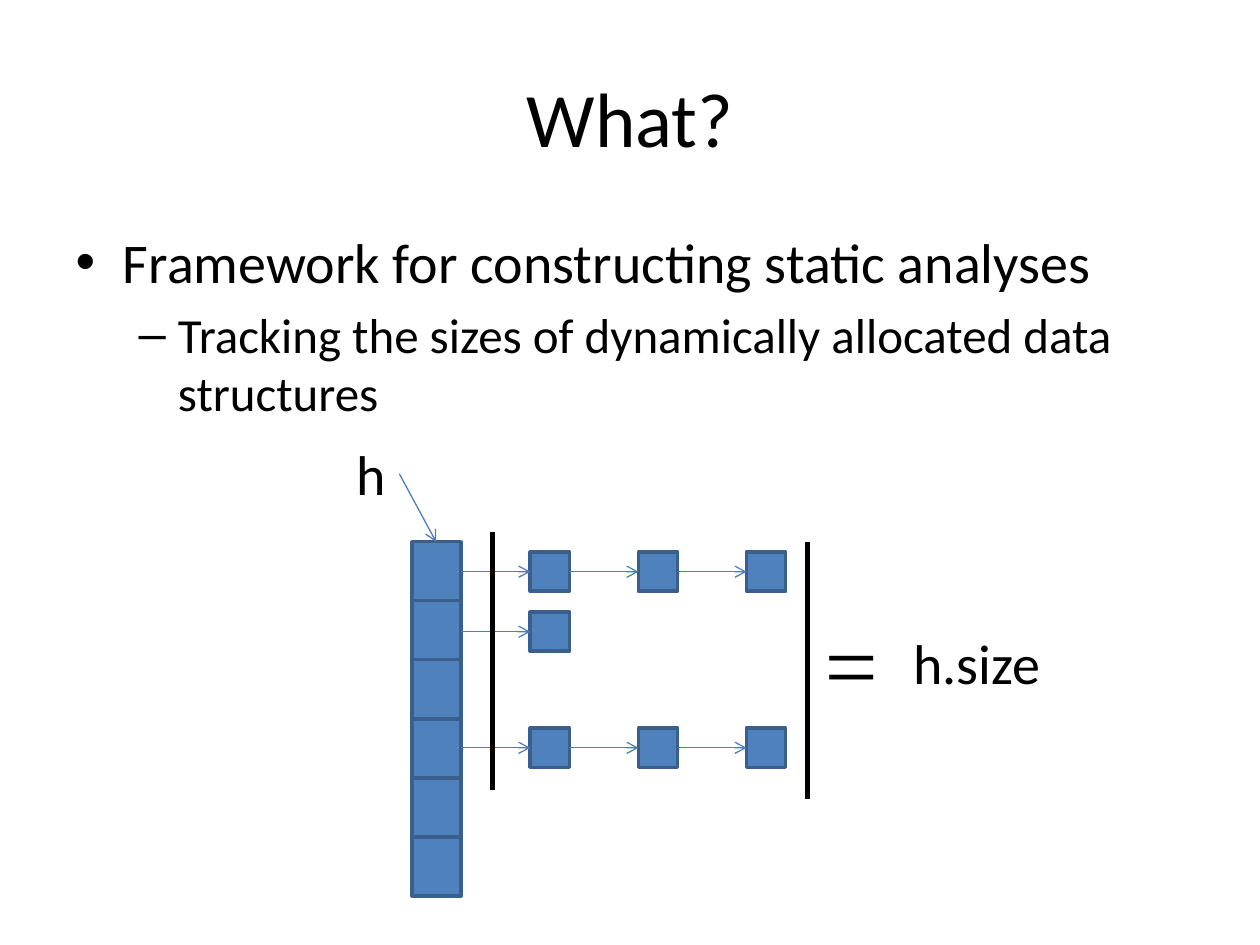
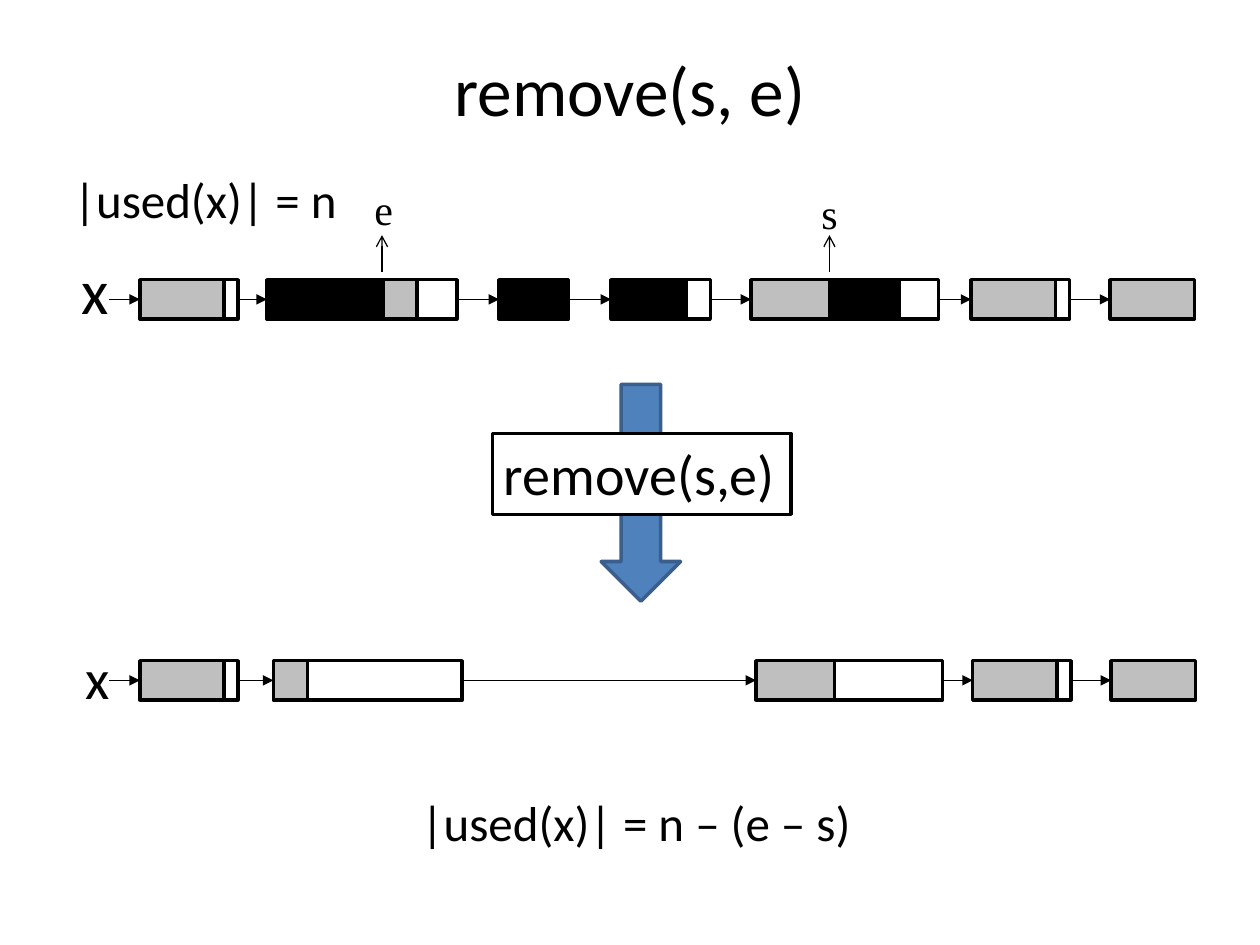
from lxml.etree import SubElement
from pptx import Presentation
from pptx.dml.color import RGBColor
from pptx.enum.shapes import MSO_CONNECTOR, MSO_SHAPE
from pptx.enum.text import MSO_ANCHOR, PP_ALIGN
from pptx.oxml.ns import qn
from pptx.util import Cm, Pt

COLORS = {
    "black": "000000",
    "white": "FFFFFF",
    "gray": "BFBFBF",
    "blue": "4F81BD",
    "blue_outline": "3A5F8C",
    "blue_arrow": "4B7EBC",
}
FONT = "Calibri"
SERIF = "Times New Roman"


def add_box(slide, left, top, width, height, fill, outline, preset=MSO_SHAPE.RECTANGLE):
    shape = slide.shapes.add_shape(preset, Cm(left), Cm(top), Cm(width), Cm(height))
    shape.shadow.inherit = False
    shape.fill.solid()
    shape.fill.fore_color.rgb = RGBColor.from_string(COLORS[fill])
    shape.line.color.rgb = RGBColor.from_string(COLORS[outline])
    shape.line.width = Pt(2)


def add_line(slide, start, end, color, width=0.75, arrowhead=None):
    connector = slide.shapes.add_connector(
        MSO_CONNECTOR.STRAIGHT, *[Cm(value) for value in (*start, *end)])
    connector.line.color.rgb = RGBColor.from_string(COLORS[color])
    connector.line.width = Pt(width)
    properties = connector.element.spPr
    if arrowhead:
        SubElement(properties.find(qn("a:ln")), qn("a:tailEnd"), type=arrowhead)
    SubElement(properties, qn("a:effectLst"))


presentation = Presentation()
presentation.slide_width, presentation.slide_height = Cm(25.4), Cm(19.05)
what_slide = presentation.slides.add_slide(presentation.slide_layouts[1])
remove_slide = presentation.slides.add_slide(presentation.slide_layouts[5])

# Titles
for slide, text, top, height, size in [
    (what_slide, "What?", 0.76, 3.18, 44),
    (remove_slide, "remove(s, e)", 0.81, 1.96, 39.6),
]:
    title = slide.shapes.title
    title.left, title.top, title.width, title.height = Cm(1.27), Cm(top), Cm(22.86), Cm(height)
    title.text_frame.text = text
    title.text_frame.vertical_anchor = MSO_ANCHOR.MIDDLE
    paragraph = title.text_frame.paragraphs[0]
    paragraph.alignment = PP_ALIGN.CENTER
    paragraph.font.name, paragraph.font.size = FONT, Pt(size)

# Slide 1: list
body = what_slide.placeholders[1]
body.left, body.top, body.width, body.height = Cm(1.27), Cm(4.45), Cm(22.86), Cm(12.57)
body.text_frame.text = ("Framework for constructing static analyses\n"
                        "Tracking the sizes of dynamically allocated data structures")
for level, (paragraph, size) in enumerate(zip(body.text_frame.paragraphs, (32, 28))):
    paragraph.level = level
    paragraph.font.name, paragraph.font.size = FONT, Pt(size)

# Slide 1: hash table column
table_left, table_top, cell_width, cell_height = 8.31, 10.92, 0.99, 1.19
for row in range(6):
    add_box(what_slide, table_left, table_top + row * cell_height,
            cell_width, cell_height, "blue", "blue_outline")
add_line(what_slide, (8.05, 9.55), (8.79, table_top), "blue_arrow", arrowhead="arrow")

# Slide 1: linked chains, each as top and node count
node_size, first_node, node_pitch = 0.79, 10.69, 2.18
for top, count in [(11.13, 3), (12.34, 1), (14.68, 3)]:
    arrow_start, middle = table_left + cell_width, top + node_size / 2
    for index in range(count):
        left = first_node + index * node_pitch
        add_box(what_slide, left, top, node_size, node_size, "blue", "blue_outline")
        add_line(what_slide, (arrow_start, middle), (left, middle), "blue_arrow",
                 arrowhead="arrow")
        arrow_start = left + node_size

# Slide 1: size bars
for x, top, bottom in [(9.93, 10.72, 15.93), (16.28, 10.92, 16.1)]:
    add_line(what_slide, (x, top), (x, bottom), "black", width=3)

# Slide 2: lists before and after, each node as left edge and segments
block_height = 0.79
full_block = [(1.7, "gray"), (0.28, "white")]
last_block = [(1.7, "gray")]
before = [
    (2.82, full_block),
    (5.38, [(2.34, "black"), (0.69, "gray"), (0.8, "white")]),
    (10.06, [(1.4, "black")]),
    (12.32, [(1.52, "black"), (0.48, "white")]),
    (15.14, [(1.58, "gray"), (1.4, "black"), (0.8, "white")]),
    (19.58, full_block),
    (22.38, last_block),
]
after = [
    (2.82, full_block),
    (5.51, [(0.69, "gray"), (3.12, "white")]),
    (15.24, [(1.58, "gray"), (2.18, "white")]),
    (19.61, full_block),
    (22.4, last_block),
]
for top, nodes in [(5.64, before), (13.32, after)]:
    right, middle = 2.2, top + block_height / 2
    for left, segments in nodes:
        add_line(remove_slide, (right, middle), (left, middle), "black", arrowhead="triangle")
        right = left
        for width, fill in segments:
            add_box(remove_slide, right, top, width, block_height, fill, "black")
            right += width

# Slide 2: position markers and operation arrow
for x in (7.7, 16.72):
    add_line(remove_slide, (x, 5.48), (x, 4.74), "black", arrowhead="arrow")
add_box(remove_slide, 12.12, 7.75, 1.6, 4.37, "blue", "blue_outline", MSO_SHAPE.DOWN_ARROW)
add_box(remove_slide, 9.93, 8.74, 6.02, 1.63, "white", "black")

# Labels on both slides
for slide, text, left, top, width, height, size, font in [
    (what_slide, "h", 6.93, 8.74, 1.12, 1.63, 32, FONT),
    (what_slide, "h.size", 18.14, 12.55, 3.1, 1.63, 32, FONT),
    (what_slide, "=", 16.18, 12.07, 1.96, 2.57, 54, SERIF),
    (remove_slide, "s", 15.47, 3.66, 2.51, 1.27, 24, SERIF),
    (remove_slide, "e", 6.45, 3.58, 2.57, 1.27, 24, SERIF),
    (remove_slide, "x", 1.4, 4.95, 0.89, 1.8, 36, FONT),
    (remove_slide, "x", 1.47, 12.85, 0.89, 1.63, 32, FONT),
    (remove_slide, "|used(x)| = n", 1.19, 3.3, 5.89, 1.45, 28, FONT),
    (remove_slide, "|used(x)| = n – (e – s)", 8.18, 15.85, 9.27, 1.45, 28, FONT),
    (remove_slide, "remove(s,e)", 9.88, 8.74, 6.02, 1.63, 32, FONT),
]:
    label = slide.shapes.add_textbox(Cm(left), Cm(top), Cm(width), Cm(height))
    label.text_frame.word_wrap = False
    label.text_frame.text = text
    paragraph = label.text_frame.paragraphs[0]
    paragraph.alignment = PP_ALIGN.CENTER
    paragraph.font.name, paragraph.font.size = font, Pt(size)
    paragraph.font.color.rgb = RGBColor.from_string(COLORS["black"])

presentation.save("out.pptx")
